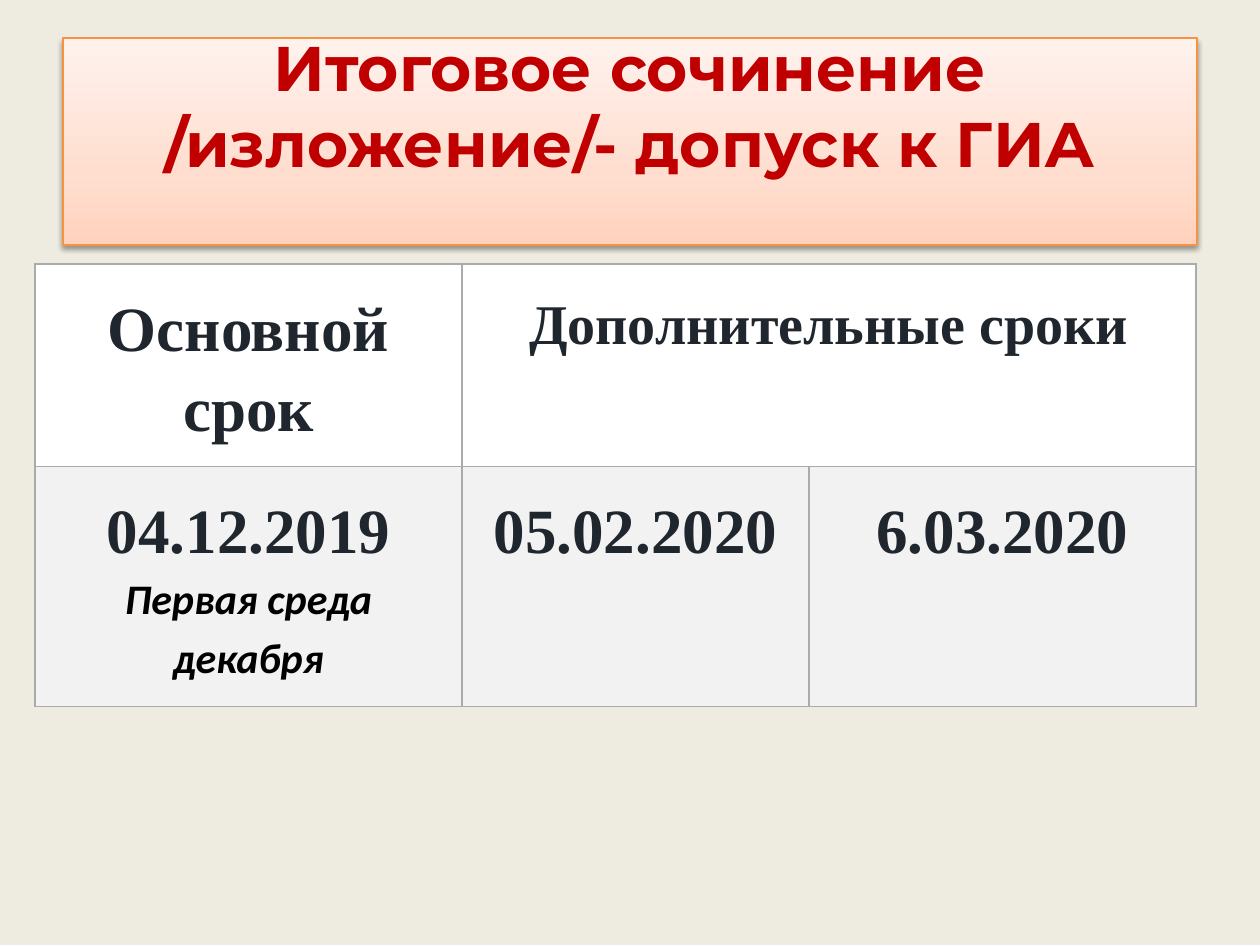
from pptx import Presentation
from pptx import util as u
from pptx.dml.color import RGBColor
from pptx.enum import shapes, text
from pptx.oxml import parse_xml
from pptx.oxml.ns import qn

PX = 914400 // 126
NS = 'xmlns:a="http://schemas.openxmlformats.org/drawingml/2006/main"'
COLORS = {
    "page": "EEECE1", "title": "C00000", "frame": "F69240", "shadow": "000000",
    "ink": "1F262D", "note": "000000", "border": "A9ABAD",
    "head": "FFFFFF", "body": "F2F2F2",
}
TITLE_STOPS = [(0, "FFD2BD"), (35, "FFDED0"), (100, "FFF2ED")]
TITLE = dict(name="Montserrat", size=36, color="title")
DATE = dict(name="Times New Roman", size=36, color="ink")
EXTRA = dict(DATE, size=32)
NOTE = dict(name="Calibri", size=24, color="note", italic=True)

COLUMNS = [427, 347, 387]
ROWS = [202, 240]
# Each cell: row, column, paragraphs
CELLS = [
    (0, 0, [("Основной срок", DATE)]),
    (0, 1, [("Дополнительные сроки", EXTRA)]),
    (1, 0, [("04.12.2019", DATE), ("Первая среда декабря", NOTE)]),
    (1, 1, [("05.02.2020", DATE)]),
    (1, 2, [("6.03.2020", DATE)]),
]


def px(n):
    return u.Emu(n * PX)


def rgb(name):
    return RGBColor.from_string(COLORS[name])


def set_attrs(obj, **values):
    for key, value in values.items():
        setattr(obj, key, value)


def write(tf, lines, spacing):
    """Fill a text frame with centred bold paragraphs."""
    for i, (words, style) in enumerate(lines):
        p = tf.add_paragraph() if i else tf.paragraphs[0]
        set_attrs(p, alignment=text.PP_ALIGN.CENTER, line_spacing=spacing)
        r = p.add_run()
        r.text = words
        set_attrs(r.font, name=style["name"], size=u.Pt(style["size"]),
                  bold=True, italic=style.get("italic", False))
        r.font.color.rgb = rgb(style["color"])


def add_title(slide):
    sp = slide.shapes.add_shape(shapes.MSO_SHAPE.RECTANGLE,
                                px(63), px(38), px(1134), px(207))
    sp.fill.gradient()
    sp.fill.gradient_angle = 90
    stops = sp._element.spPr.find(".//" + qn("a:gsLst"))
    stops.clear()
    for pos, color in TITLE_STOPS:
        stops.append(parse_xml(f'<a:gs {NS} pos="{pos * 1000}">'
                               f'<a:srgbClr val="{color}"/></a:gs>'))
    sp.line.color.rgb = rgb("frame")
    sp.line.width = u.Pt(0.75)
    sp.shadow.inherit = False
    sp._element.spPr.find(qn("a:effectLst")).append(parse_xml(
        f'<a:outerShdw {NS} blurRad="{u.Pt(3.1)}" dist="{u.Pt(1.6)}" dir="5400000" '
        f'rotWithShape="0"><a:srgbClr val="{COLORS["shadow"]}">'
        '<a:alpha val="38000"/></a:srgbClr></a:outerShdw>'))
    tf = sp.text_frame
    set_attrs(tf, word_wrap=True, vertical_anchor=text.MSO_ANCHOR.BOTTOM,
              margin_top=0, margin_bottom=px(65))
    write(tf, [("Итоговое сочинение /изложение/- допуск к ГИА", TITLE)], 1.0)


def add_borders(cell):
    tc_pr = cell._tc.get_or_add_tcPr()
    for i, side in enumerate("LRTB"):
        tc_pr.insert(i, parse_xml(
            f'<a:ln{side} {NS} w="{u.Pt(1)}"><a:solidFill>'
            f'<a:srgbClr val="{COLORS["border"]}"/></a:solidFill></a:ln{side}>'))


def add_dates_table(slide):
    table = slide.shapes.add_table(len(ROWS), len(COLUMNS), px(35), px(264),
                                   px(sum(COLUMNS)), px(sum(ROWS))).table
    set_attrs(table, first_row=False, horz_banding=False)
    for column, width in zip(table.columns, COLUMNS):
        column.width = px(width)
    for row, height, fill in zip(table.rows, ROWS, ("head", "body")):
        row.height = px(height)
        for cell in row.cells:
            cell.fill.solid()
            cell.fill.fore_color.rgb = rgb(fill)
            set_attrs(cell, margin_left=px(25), margin_right=px(25),
                      margin_top=px(21), margin_bottom=px(21))
            add_borders(cell)
    table.cell(0, 1).merge(table.cell(0, 2))
    for row, column, lines in CELLS:
        write(table.cell(row, column).text_frame, lines, 1.15)


def main():
    prs = Presentation()
    set_attrs(prs, slide_width=px(1260), slide_height=px(945))
    slide = prs.slides.add_slide(prs.slide_layouts[6])
    slide.background.fill.solid()
    slide.background.fill.fore_color.rgb = rgb("page")
    add_title(slide)
    add_dates_table(slide)
    prs.save("out.pptx")


if __name__ == "__main__":
    main()
